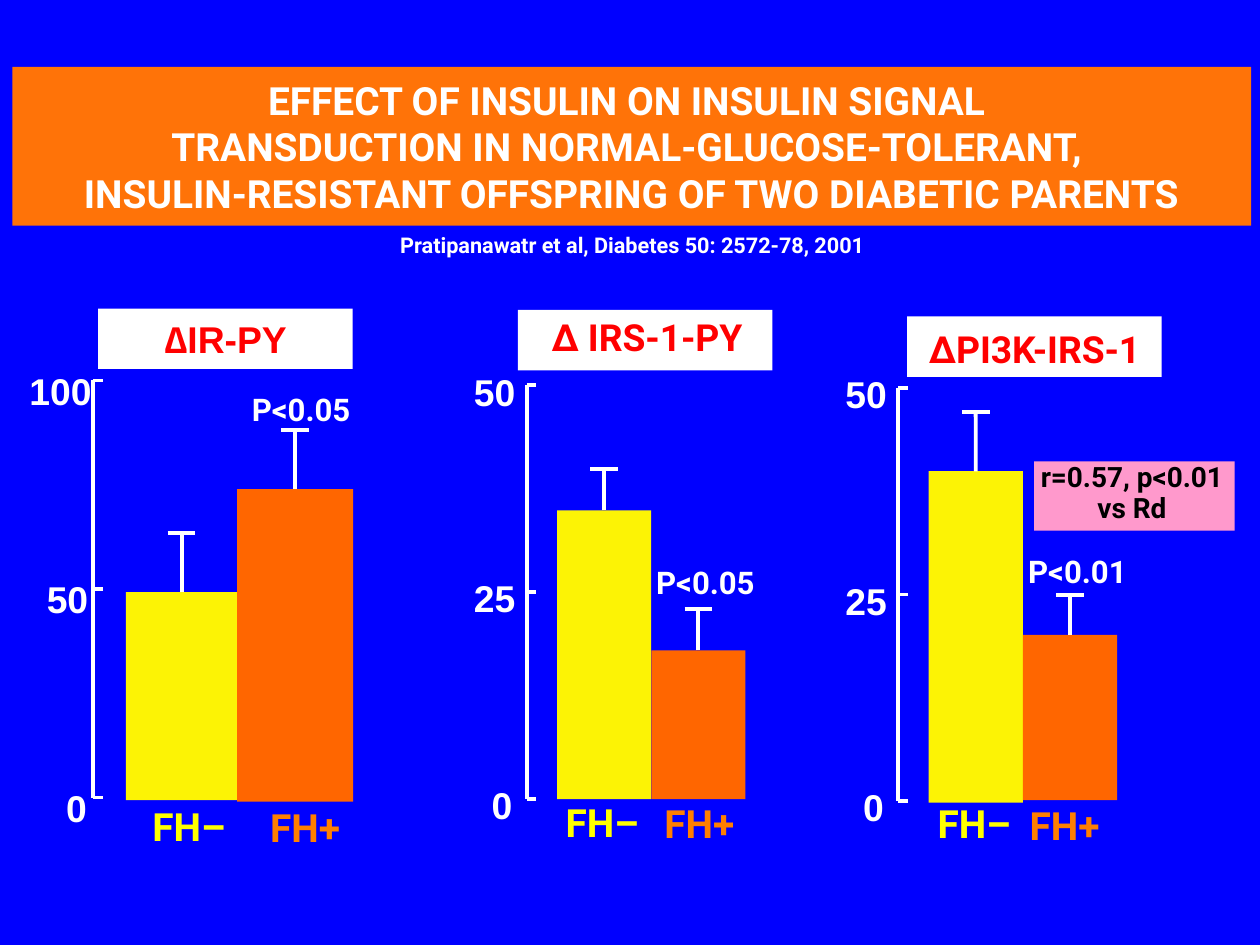
from pptx import Presentation
from pptx.dml.color import RGBColor
from pptx.enum.shapes import MSO_CONNECTOR, MSO_SHAPE
from pptx.enum.text import MSO_ANCHOR, MSO_AUTO_SIZE, PP_ALIGN
from pptx.oxml.ns import qn
from pptx.util import Cm, Pt
from lxml.etree import SubElement

BLUE = RGBColor(0x00, 0x00, 0xFF)
WHITE = RGBColor(0xFF, 0xFF, 0xFF)
BLACK = RGBColor(0x00, 0x00, 0x00)
RED = RGBColor(0xFF, 0x00, 0x00)
AMBER = RGBColor(0xFF, 0x73, 0x08)
LEMON = RGBColor(0xFC, 0xF3, 0x05)
YELLOW = RGBColor(0xFF, 0xFF, 0x00)
ORANGE = RGBColor(0xFF, 0x66, 0x00)
TANGO = RGBColor(0xFF, 0x7F, 0x00)
PINK = RGBColor(0xFF, 0x99, 0xCC)

PANELS = [
    dict(plate=(1.98, 6.22), head=("∆IR-PY", (3.05, 6.25, 3, 1.17), "Arial", 1),
         axis=(1.88, 7.67, 16.08, 2), ticks=((100, 1.22), (50, 1.36), (0, 1.54)), lift=0.25,
         bars=((2.54, 11.94, 2.24, 4.19, 10.74), (4.78, 9.86, 2.34, 6.3, 8.66)),
         names=((2.59, 16.28), (4.93, 16.31)), sig=("P<0.05", 4.8, 7.75)),
    dict(plate=(10.44, 6.25), head=("∆ IRS-1-PY", (10.85, 6.32, 4.39, 1.07), "Roboto", 0.9),
         axis=(10.62, 7.77, 16.1, 2.25), ticks=((50, 9.97), (25, 9.97), (0, 10.12)), lift=0.33,
         bars=((11.23, 10.29, 1.9, 5.82, 9.45), (13.13, 13.11, 1.9, 3, 12.27)),
         names=((10.92, 16.21), (12.88, 16.23)), sig=("P<0.05", 12.95, 11.23)),
    dict(plate=(18.29, 6.38), head=("∆PI3K-IRS-1", (17.75, 6.45, 6.22, 1.17), "Roboto", 1),
         axis=(18.11, 7.82, 16.15, 2.25), ticks=((50, 17.46), (25, 17.46), (0, 17.61)), lift=0.33,
         bars=((18.72, 9.5, 1.9, 6.68, 8.31), (20.62, 12.8, 1.9, 3.33, 11.99)),
         names=((18.42, 16.23), (20.24, 16.26)), sig=("P<0.01", 20.45, 11.02)),
]


class Deck:
    base = dict(name="Roboto", bold=True)

    def __init__(self):
        self.prs = Presentation()
        self.prs.slide_width, self.prs.slide_height = Cm(25.4), Cm(19.05)
        self.slide = self.prs.slides.add_slide(self.prs.slide_layouts[5])
        fill = self.slide.background.fill
        fill.solid()
        fill.fore_color.rgb = BLUE

    def style(self, para, color, size, space=1, **extra):
        para.alignment = PP_ALIGN.CENTER
        if space != 1:
            para.line_spacing = space
        for key, value in {**self.base, "size": Pt(size), **extra}.items():
            setattr(para.font, key, value)
        para.font.color.rgb = color

    def title(self, text, box):
        shape = self.slide.shapes.title
        for key, value in zip(("left", "top", "width", "height"), box):
            setattr(shape, key, Cm(value))
        shape.fill.solid()
        shape.fill.fore_color.rgb = AMBER
        frame = shape.text_frame
        frame.auto_size = MSO_AUTO_SIZE.NONE
        frame.vertical_anchor = MSO_ANCHOR.MIDDLE
        frame.text = text
        self.style(frame.paragraphs[0], WHITE, 22.2)

    def text(self, words, box, color, size, wrap=False, pad=True, **extra):
        frame = self.slide.shapes.add_textbox(*map(Cm, box)).text_frame
        frame.word_wrap = wrap
        frame.auto_size = MSO_AUTO_SIZE.SHAPE_TO_FIT_TEXT
        if not pad:
            for side in ("left", "top", "right", "bottom"):
                setattr(frame, f"margin_{side}", 0)
        frame.text = words
        for para in frame.paragraphs:
            self.style(para, color, size, **extra)

    def rect(self, box, color):
        shape = self.slide.shapes.add_shape(MSO_SHAPE.RECTANGLE, *map(Cm, box))
        shape.shadow.inherit = False
        shape.fill.solid()
        shape.fill.fore_color.rgb = color
        shape.line.fill.background()
        return shape

    def line(self, start, end, width=2.25):
        link = self.slide.shapes.add_connector(
            MSO_CONNECTOR.STRAIGHT, *map(Cm, (*start, *end)))
        link.line.color.rgb = WHITE
        link.line.width = Pt(width)
        SubElement(link._element.spPr, qn("a:effectLst"))
        return link

    def bar(self, x, y, width, height, peak, color):
        shape = self.rect((x, y, width, height), color)
        mid = x + width / 2
        self.line((mid, y), (mid, peak)).begin_connect(shape, 0)
        self.line((mid - 0.28, peak), (mid + 0.28, peak))

    def axis(self, x, top, base, width, ticks, lift):
        self.line((x, top), (x, base), width)
        for row, (value, left) in enumerate(ticks):
            y = top + row * (base - top) / 2
            self.line((x, y), (x + 0.19, y), width)
            span = 0.42 * len(str(value))
            self.text(str(value), (left - span / 2, y - lift, span, 0.91),
                      WHITE, 21.3, pad=False, name="Arial")

    def panel(self, plate, head, axis, ticks, lift, bars, names, sig):
        self.rect((*plate, 5.13, 1.22), WHITE)
        words, box, face, space = head
        self.text(words, box, RED, 21.3, name=face, space=space)
        for spec, color in zip(bars, (LEMON, ORANGE)):
            self.bar(*spec, color)
        self.axis(*axis, ticks, lift)
        for label, spot, color in zip(("FH–", "FH+"), names, (YELLOW, TANGO)):
            self.text(label, (*spot, 2.44, 0.86), color, 22.2,
                      wrap=True, pad=False, space=0.9)
        words, x, y = sig
        self.text(words, (x, y, 2.54, 1.02), WHITE, 17.8)


def main():
    deck = Deck()
    deck.title("EFFECT OF INSULIN ON INSULIN SIGNAL \v"
               "TRANSDUCTION IN NORMAL-GLUCOSE-TOLERANT, \v"
               "INSULIN-RESISTANT OFFSPRING OF TWO DIABETIC PARENTS",
               (0.25, 1.35, 24.97, 3.2))
    deck.text("Pratipanawatr et al, Diabetes 50: 2572-78, 2001",
              (7.62, 4.55, 10.26, 0.79), WHITE, 12.4)
    for panel in PANELS:
        deck.panel(**panel)
    deck.rect((20.85, 9.3, 4.04, 1.4), PINK)
    deck.text("r=0.57, p<0.01\nvs Rd", (20.09, 9.35, 5.46, 1.22), BLACK, 16,
              wrap=True, pad=False, space=0.9)
    deck.prs.save("out.pptx")


if __name__ == "__main__":
    main()
